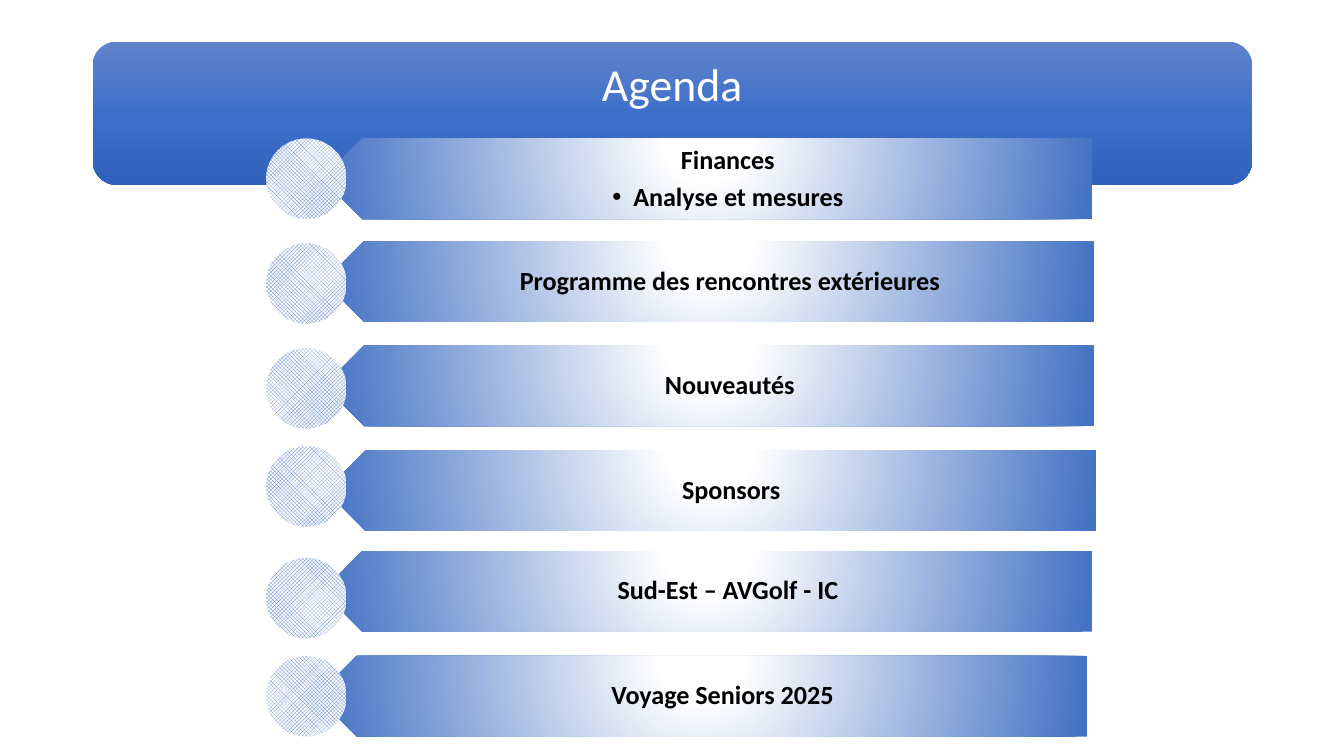
"""Build the agenda slide: a title banner above six labelled arrow bars."""
from dataclasses import dataclass

from lxml import etree
from pptx import Presentation
from pptx.dml.color import RGBColor
from pptx.enum import dml, shapes, text
from pptx.oxml import ns
from pptx.util import Pt


@dataclass(frozen=True)
class Theme:
    font: str = "Calibri"
    title_size: int = 49
    label_size: int = 28
    white: str = "FFFFFF"
    black: str = "000000"
    blue: str = "4472C4"
    banner: tuple = ((0, "6183CB"), (50, "3E70CA"), (100, "3062BB"))
    bar: tuple = ((0, "FFFFFF"), (11, "FFFFFF"), (100, "4472C4"))


def write_text(shape, lines, size, color, bold=False, anchor=text.MSO_ANCHOR.MIDDLE,
               insets=(0, 0, 0, 0), bullets=False):
    frame = shape.text_frame
    frame.word_wrap = True
    frame.auto_size = text.MSO_AUTO_SIZE.NONE
    frame.vertical_anchor = anchor
    frame.margin_left, frame.margin_top, frame.margin_right, frame.margin_bottom = map(Pt, insets)
    for index, line in enumerate(lines):
        paragraph = frame.add_paragraph() if index else frame.paragraphs[0]
        paragraph.alignment = text.PP_ALIGN.CENTER
        paragraph.line_spacing = 0.9
        paragraph.space_before = Pt(0)
        paragraph.space_after = Pt(0 if index else size * 0.35)
        run = paragraph.add_run()
        run.text = line
        run.font.name = theme.font
        run.font.size = Pt(size)
        run.font.bold = bold
        run.font.color.rgb = RGBColor.from_string(color)
        if bullets and index:
            paragraph.level = 1
            properties = paragraph._p.get_or_add_pPr()
            properties.set("marL", str(Pt(22.5)))
            properties.set("indent", str(Pt(-22.5)))
            etree.SubElement(properties, ns.qn("a:buFont"), typeface="Arial")
            etree.SubElement(properties, ns.qn("a:buChar"), char="•")


def fill_gradient(shape, stops, direction):
    shape.fill.background()
    stop_xml = "".join(
        f'<a:gs pos="{position * 1000}"><a:srgbClr val="{color}"/></a:gs>'
        for position, color in stops)
    gradient = etree.fromstring(
        f'<a:gradFill {ns.nsdecls("a")} rotWithShape="1">'
        f"<a:gsLst>{stop_xml}</a:gsLst>{direction}</a:gradFill>")
    properties = shape.element.spPr
    properties.replace(properties.find(ns.qn("a:noFill")), gradient)
    shape.line.fill.background()
    shape.shadow.inherit = False


theme = Theme()
downward = '<a:lin ang="5400000" scaled="0"/>'
radial = '<a:path path="circle"><a:fillToRect l="50000" t="-80000" r="50000" b="180000"/></a:path>'
bar_width, bar_height, text_offset = 825.8, 86.4, 21.6
dot_left = 285.1
agenda = [
    (["Finances", "Analyse et mesures"], 344.9, 148.3, 148.3),
    (["Programme des rencontres extérieures"], 347, 258.5, 260.6),
    (["Nouveautés"], 347, 370.1, 373),
    (["Sponsors"], 348.5, 482.4, 478.1),
    (["Sud-Est – AVGolf - IC"], 344.9, 590.4, 597.6),
    (["Voyage Seniors 2025"], 339.1, 702.7, 702.7),
]

presentation = Presentation()
presentation.slide_width = Pt(1440)
presentation.slide_height = Pt(810)
slide = presentation.slides.add_slide(presentation.slide_layouts[5])

banner = slide.shapes.add_shape(
    shapes.MSO_SHAPE.ROUNDED_RECTANGLE, Pt(99.4), Pt(44.6), Pt(1242), Pt(153.4))
fill_gradient(banner, theme.banner, downward)

title = slide.shapes.title
title.left, title.top, title.width, title.height = Pt(106.6), Pt(51.8), Pt(1226.9), Pt(138.2)
title.element.addprevious(banner.element)
write_text(title, ["Agenda"], theme.title_size, theme.white,
           anchor=text.MSO_ANCHOR.TOP, insets=(14.4, 14.4, 14.4, 14.4))

for lines, bar_left, bar_top, dot_top in agenda:
    bar = slide.shapes.add_shape(
        shapes.MSO_SHAPE.PENTAGON, Pt(bar_left), Pt(bar_top), Pt(bar_width), Pt(bar_height))
    bar.rotation = 180
    fill_gradient(bar, theme.bar, radial)

    label = slide.shapes.add_textbox(
        Pt(bar_left + text_offset), Pt(bar_top), Pt(bar_width - text_offset), Pt(bar_height))
    anchor = text.MSO_ANCHOR.TOP if len(lines) > 1 else text.MSO_ANCHOR.MIDDLE
    write_text(label, lines, theme.label_size, theme.black, bold=True, anchor=anchor,
               insets=(38.2, 8.6, 15.8, 8.6), bullets=True)

    dot = slide.shapes.add_shape(
        shapes.MSO_SHAPE.OVAL, Pt(dot_left), Pt(dot_top), Pt(bar_height), Pt(bar_height))
    dot.fill.patterned()
    dot.fill.pattern = dml.MSO_PATTERN.LARGE_CHECKER_BOARD
    dot.fill.fore_color.rgb = RGBColor.from_string(theme.blue)
    dot.fill.back_color.rgb = RGBColor.from_string(theme.white)
    dot.line.fill.background()
    dot.shadow.inherit = False

presentation.save("out.pptx")
